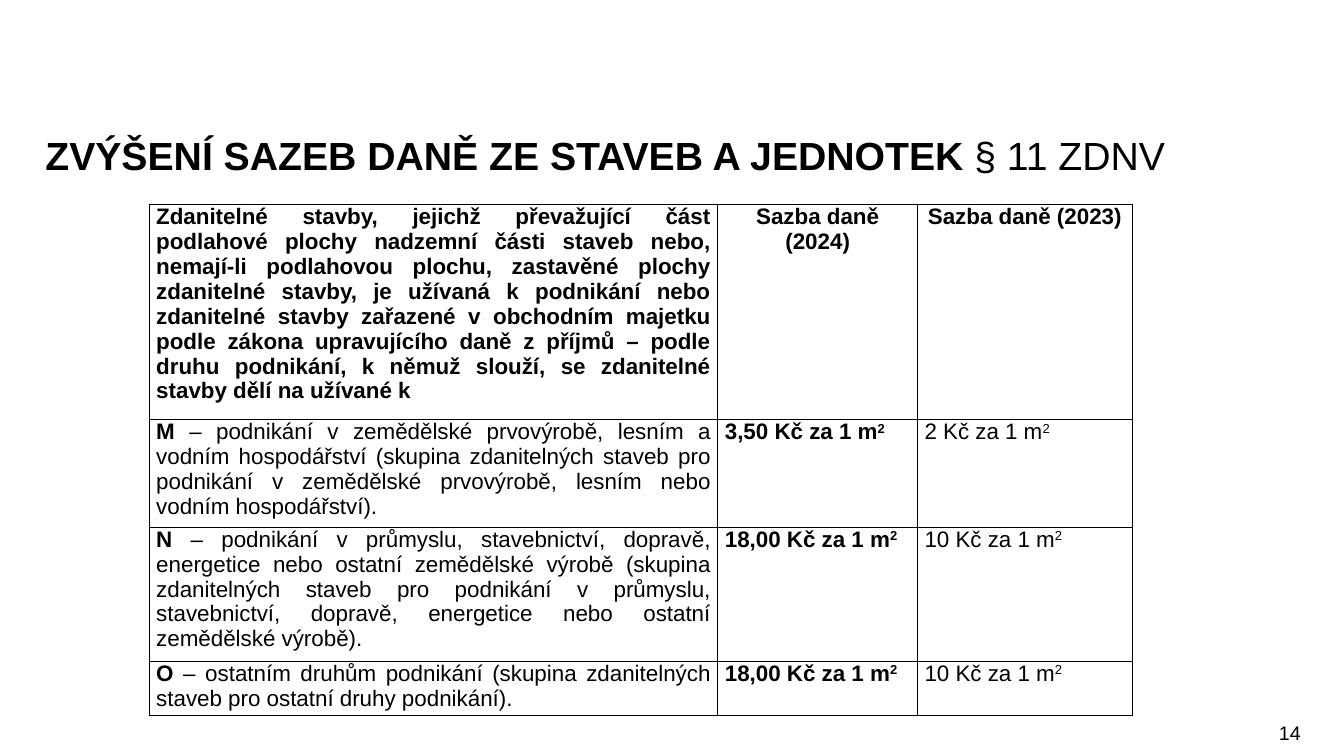
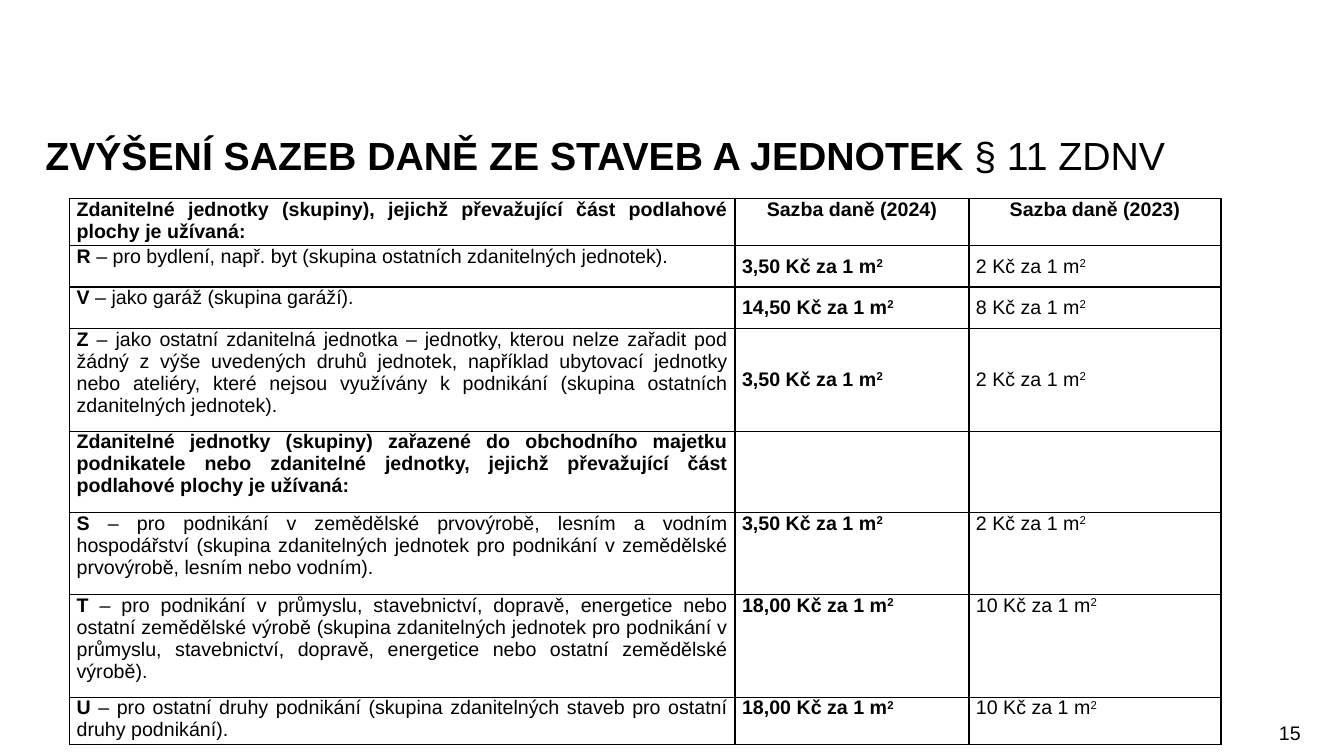
import pptx
import pptx.util
import pptx.dml.color
import pptx.enum.text
import pptx.oxml

Inches, Pt = pptx.util.Inches, pptx.util.Pt
ALIGN = pptx.enum.text.PP_ALIGN
ANCHOR = pptx.enum.text.MSO_ANCHOR
BLACK = pptx.dml.color.RGBColor(0, 0, 0)
WHITE = pptx.dml.color.RGBColor(255, 255, 255)
FONT = "Arial"
NS = "http://schemas.openxmlformats.org/drawingml/2006/main"

# Boxes: left, top, width, height
TITLE = (0.35, 1.31, 12.65, 0.75)
NUMBER = (11.23, 7.1, 1.77, 0.39)
HEADING = [("ZVÝŠENÍ SAZEB DANĚ ZE STAVEB A JEDNOTEK ", True), ("§ 11 ZDNV", False)]
YEARS = ["Sazba daně (2024)", "Sazba daně (2023)"]

# Rows: height, group letter, text, rate 2024, rate 2023, rate anchor
TOP, MID = ANCHOR.TOP, ANCHOR.MIDDLE
HOUSES = [
    (1.97, "", "Zdanitelné stavby, jejichž převažující část podlahové plochy nadzemní části "
     "staveb nebo, nemají-li podlahovou plochu, zastavěné plochy zdanitelné stavby, je "
     "užívaná k podnikání nebo zdanitelné stavby zařazené v obchodním majetku podle zákona "
     "upravujícího daně z příjmů – podle druhu podnikání, k němuž slouží, se zdanitelné "
     "stavby dělí na užívané k", "", "", TOP),
    (0.98, "M", "podnikání v zemědělské prvovýrobě, lesním a vodním hospodářství (skupina "
     "zdanitelných staveb pro podnikání v zemědělské prvovýrobě, lesním nebo vodním "
     "hospodářství).", "3,50", "2", TOP),
    (1.23, "N", "podnikání v průmyslu, stavebnictví, dopravě, energetice nebo ostatní "
     "zemědělské výrobě (skupina zdanitelných staveb pro podnikání v průmyslu, "
     "stavebnictví, dopravě, energetice nebo ostatní zemědělské výrobě).",
     "18,00", "10", TOP),
    (0.49, "O", "ostatním druhům podnikání (skupina zdanitelných staveb pro ostatní druhy "
     "podnikání).", "18,00", "10", TOP),
]
UNITS = [
    (0.41, "", "Zdanitelné jednotky (skupiny), jejichž převažující část podlahové plochy je "
     "užívaná:", "", "", TOP),
    (0.41, "R", "pro bydlení, např. byt (skupina ostatních zdanitelných jednotek).",
     "3,50", "2", MID),
    (0.41, "V", "jako garáž (skupina garáží).", "14,50", "8", MID),
    (1.02, "Z", "jako ostatní zdanitelná jednotka – jednotky, kterou nelze zařadit pod žádný "
     "z výše uvedených druhů jednotek, například ubytovací jednotky nebo ateliéry, které "
     "nejsou využívány k podnikání (skupina ostatních zdanitelných jednotek).",
     "3,50", "2", MID),
    (0.81, "", "Zdanitelné jednotky (skupiny) zařazené do obchodního majetku podnikatele nebo "
     "zdanitelné jednotky, jejichž převažující část podlahové plochy je užívaná:",
     "", "", TOP),
    (0.81, "S", "pro podnikání v zemědělské prvovýrobě, lesním a vodním hospodářství (skupina "
     "zdanitelných jednotek pro podnikání v zemědělské prvovýrobě, lesním nebo vodním).",
     "3,50", "2", TOP),
    (1.02, "T", "pro podnikání v průmyslu, stavebnictví, dopravě, energetice nebo ostatní "
     "zemědělské výrobě (skupina zdanitelných jednotek pro podnikání v průmyslu, "
     "stavebnictví, dopravě, energetice nebo ostatní zemědělské výrobě).",
     "18,00", "10", TOP),
    (0.41, "U", "pro ostatní druhy podnikání (skupina zdanitelných staveb pro ostatní druhy "
     "podnikání).", "18,00", "10", TOP),
]


def write(para, parts, size, align):
    """Fill a paragraph with (text, bold) or (text, bold, raised) parts."""
    para.alignment = align
    for text, bold, *raised in parts:
        run = para.add_run()
        run.text = text
        style = {"name": FONT, "size": Pt(size), "bold": bold}
        for key, value in style.items():
            setattr(run.font, key, value)
        run.font.color.rgb = BLACK
        if raised:
            run.font._element.set("baseline", "30000")


def frame(cell):
    """Draw a thin black line on each side of a cell."""
    props = cell._tc.get_or_add_tcPr()
    for side in ("lnL", "lnR", "lnT", "lnB"):
        props.append(pptx.oxml.parse_xml(
            f'<a:{side} xmlns:a="{NS}" w="12700"><a:solidFill>'
            f'<a:srgbClr val="{BLACK}"/></a:solidFill></a:{side}>'))
    cell.fill.background()


def fill(cell, parts, size, align, anchor):
    frame(cell)
    margins = {"margin_left": 0.07, "margin_right": 0.07,
               "margin_top": 0, "margin_bottom": 0}
    for key, value in margins.items():
        setattr(cell, key, Inches(value))
    cell.vertical_anchor = anchor
    write(cell.text_frame.paragraphs[0], parts, size, align)


def rate(value, bold):
    return [(f"{value} Kč za 1 m", bold), ("2", bold, True)] if value else []


def add_rates(slide, left, top, widths, rows, size):
    """Place the table of tax rates."""
    box = [Inches(v) for v in (left, top, sum(widths), sum(row[0] for row in rows))]
    table = slide.shapes.add_table(len(rows), len(widths), *box).table
    table.first_row = table.horz_banding = False
    for col, width in zip(table.columns, widths):
        col.width = Inches(width)
    for at, (high, group, text, new, old, anchor) in enumerate(rows):
        table.rows[at].height = Inches(high)
        label = [(group + " ", True), ("– " + text, False)] if group else [(text, True)]
        fill(table.cell(at, 0), label, size, ALIGN.JUSTIFY, TOP)
        if at == 0:
            pairs, align = [[(year, True)] for year in YEARS], ALIGN.CENTER
        else:
            pairs, align = [rate(new, True), rate(old, False)], ALIGN.JUSTIFY
        for col, parts in enumerate(pairs, 1):
            fill(table.cell(at, col), parts, size, align, anchor)


def add_title(slide, box):
    title = slide.shapes.title
    sides = ("left", "top", "width", "height")
    for key, value in zip(sides, box):
        setattr(title, key, Inches(value))
    text = title.text_frame
    text.word_wrap = True
    text.auto_size = pptx.enum.text.MSO_AUTO_SIZE.NONE
    text.vertical_anchor = TOP
    para = text.paragraphs[0]
    para.line_spacing = 0.9
    write(para, HEADING, 28, ALIGN.LEFT)


def add_number(slide, box, number):
    text = slide.shapes.add_textbox(*[Inches(v) for v in box]).text_frame
    text.word_wrap = True
    write(text.paragraphs[0], [(str(number), False)], 14, ALIGN.RIGHT)


def add_page(deck, number, *table):
    """Build one slide: title, number and table."""
    slide = deck.slides.add_slide(deck.slide_layouts[5])
    add_number(slide, NUMBER, number)
    add_title(slide, TITLE)
    add_rates(slide, *table)


def main():
    deck = pptx.Presentation()
    deck.slide_width, deck.slide_height = Inches(13.33), Inches(7.5)
    back = deck.slide_master.background.fill
    back.solid()
    back.fore_color.rgb = WHITE
    add_page(deck, 14, 1.48, 2.03, (5.64, 1.98, 2.13), HOUSES, 16)
    add_page(deck, 15, 0.69, 1.97, (6.6, 2.32, 2.5), UNITS, 14)
    deck.save("out.pptx")


if __name__ == "__main__":
    main()
